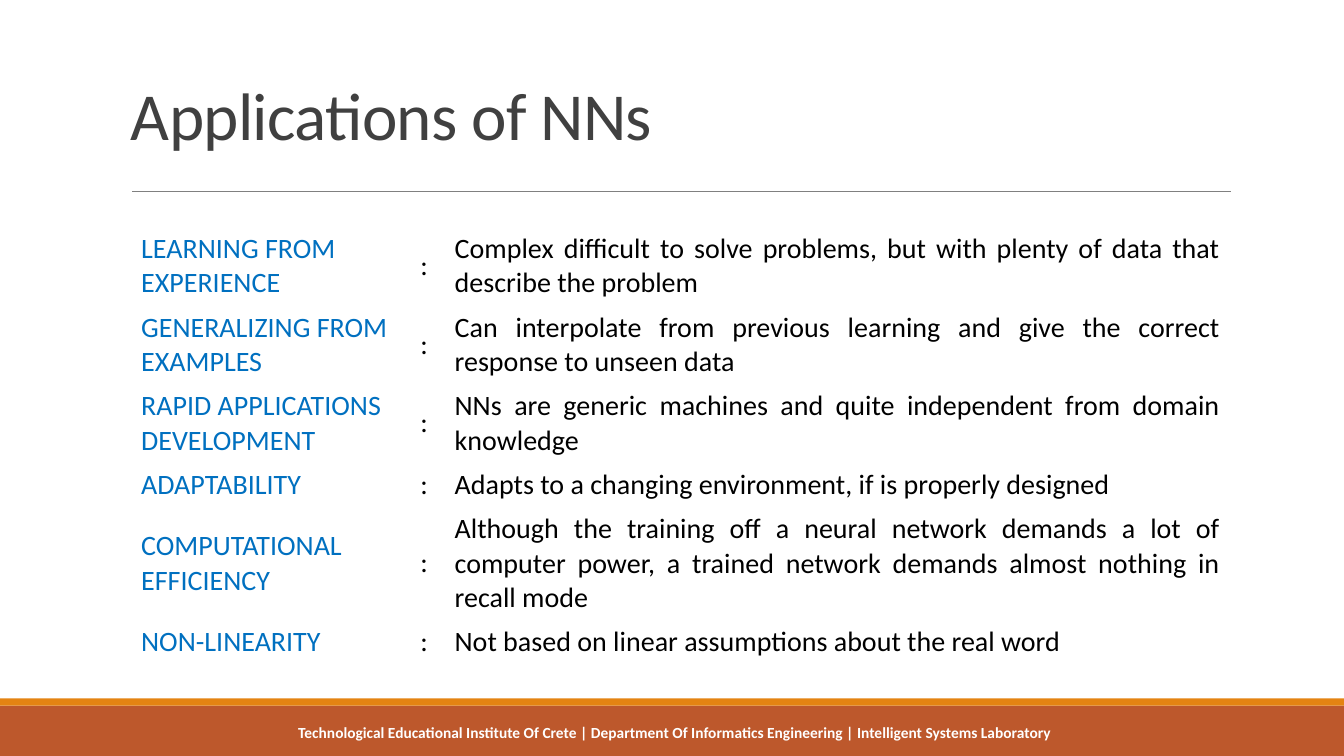
from lxml import etree
from pptx import Presentation
from pptx import util as u
from pptx.dml.color import RGBColor
from pptx.enum import shapes, text
from pptx.oxml import ns

TITLE = "Applications of NNs"
FOOTER = ("Technological Educational Institute Of Crete | "
          "Department Of Informatics Engineering | Intelligent Systems Laboratory")
APPLICATIONS = [
    ("LEARNING FROM EXPERIENCE", 2,
     "Complex difficult to solve problems, but with plenty of data that describe the problem"),
    ("GENERALIZING FROM EXAMPLES", 2,
     "Can interpolate from previous learning and give the correct response to unseen data"),
    ("RAPID APPLICATIONS DEVELOPMENT", 2,
     "NNs are generic machines and quite independent from domain knowledge"),
    ("ADAPTABILITY", 1,
     "Adapts to a changing environment, if is properly designed"),
    ("COMPUTATIONAL EFFICIENCY", 3,
     "Although the training off a neural network demands a lot of computer power, "
     "a trained network demands almost nothing in recall mode"),
    ("NON-LINEARITY", 1,
     "Not based on linear assumptions about the real word"),
]
COLORS = {"band": "BD582C", "stripe": "E48312", "rule": "808080", "title": "404040",
          "topic": "0070C0", "body": "000000", "footer": "FFFFFF"}
FONT = "Calibri"
WIDTH, HEIGHT = 13.33, 7.5
BAND_TOP, STRIPE_TOP = 7, 6.93
TABLE_LEFT, TABLE_TOP = 1.3, 2.25
COLUMNS = (2.77, 0.34, 7.79)
LINE_HEIGHT, ROW_PADDING = 0.34, 0.1


def color(key):
    return RGBColor.from_string(COLORS[key])


def write(frame, words, size, key, align, bold=False):
    frame.text = words
    frame.word_wrap = True
    paragraph = frame.paragraphs[0]
    paragraph.alignment = align
    font = paragraph.runs[0].font
    font.name, font.size, font.bold = FONT, u.Pt(size), bold
    font.color.rgb = color(key)
    return paragraph


def add_bar(slide, top, bottom, key):
    bar = slide.shapes.add_shape(shapes.MSO_SHAPE.RECTANGLE, 0, u.Inches(top),
                                 u.Inches(WIDTH), u.Inches(bottom - top))
    bar.shadow.inherit = False
    bar.fill.solid()
    bar.fill.fore_color.rgb = color(key)
    bar.line.fill.background()


def add_text(slide, box, *style):
    frame = slide.shapes.add_textbox(*map(u.Inches, box)).text_frame
    return frame, write(frame, *style)


def add_rule(slide):
    rule = slide.shapes.add_connector(shapes.MSO_CONNECTOR.STRAIGHT, u.Inches(1.31),
                                      u.Inches(1.9), u.Inches(12.21), u.Inches(1.9))
    rule.line.color.rgb = color("rule")
    rule.line.width = u.Pt(0.5)
    etree.SubElement(rule._element.spPr, ns.qn("a:effectLst"))


def add_applications(slide):
    heights = [ROW_PADDING + LINE_HEIGHT * lines for _, lines, _ in APPLICATIONS]
    table = slide.shapes.add_table(
        len(APPLICATIONS), len(COLUMNS), u.Inches(TABLE_LEFT), u.Inches(TABLE_TOP),
        u.Inches(sum(COLUMNS)), u.Inches(sum(heights))).table
    table.first_row = table.horz_banding = False
    for column, width in zip(table.columns, COLUMNS):
        column.width = u.Inches(width)
    left, justify = text.PP_ALIGN.LEFT, text.PP_ALIGN.JUSTIFY
    for row, height, (topic, _, reason) in zip(table.rows, heights, APPLICATIONS):
        row.height = u.Inches(height)
        parts = ((topic, "topic", left), (":", "body", left), (reason, "body", justify))
        for cell, (words, key, align) in zip(row.cells, parts):
            cell.fill.background()
            cell.vertical_anchor = text.MSO_ANCHOR.MIDDLE
            write(cell.text_frame, words, 20, key, align)


def main():
    deck = Presentation()
    deck.slide_width, deck.slide_height = u.Inches(WIDTH), u.Inches(HEIGHT)
    slide = deck.slides.add_slide(deck.slide_layouts[6])
    add_bar(slide, BAND_TOP, HEIGHT, "band")
    add_bar(slide, STRIPE_TOP, BAND_TOP, "stripe")
    add_rule(slide)
    frame, title = add_text(slide, (1.2, 0.62, 11, 0.96), TITLE, 48, "title",
                            text.PP_ALIGN.LEFT)
    frame.vertical_anchor = text.MSO_ANCHOR.BOTTOM
    title.line_spacing = 0.85
    title.runs[0]._r.get_or_add_rPr().set("spc", "-50")
    add_text(slide, (0.15, 7.12, 13.09, 0.38), FOOTER, 11, "footer",
             text.PP_ALIGN.CENTER, True)
    add_applications(slide)
    deck.save("out.pptx")


if __name__ == "__main__":
    main()
